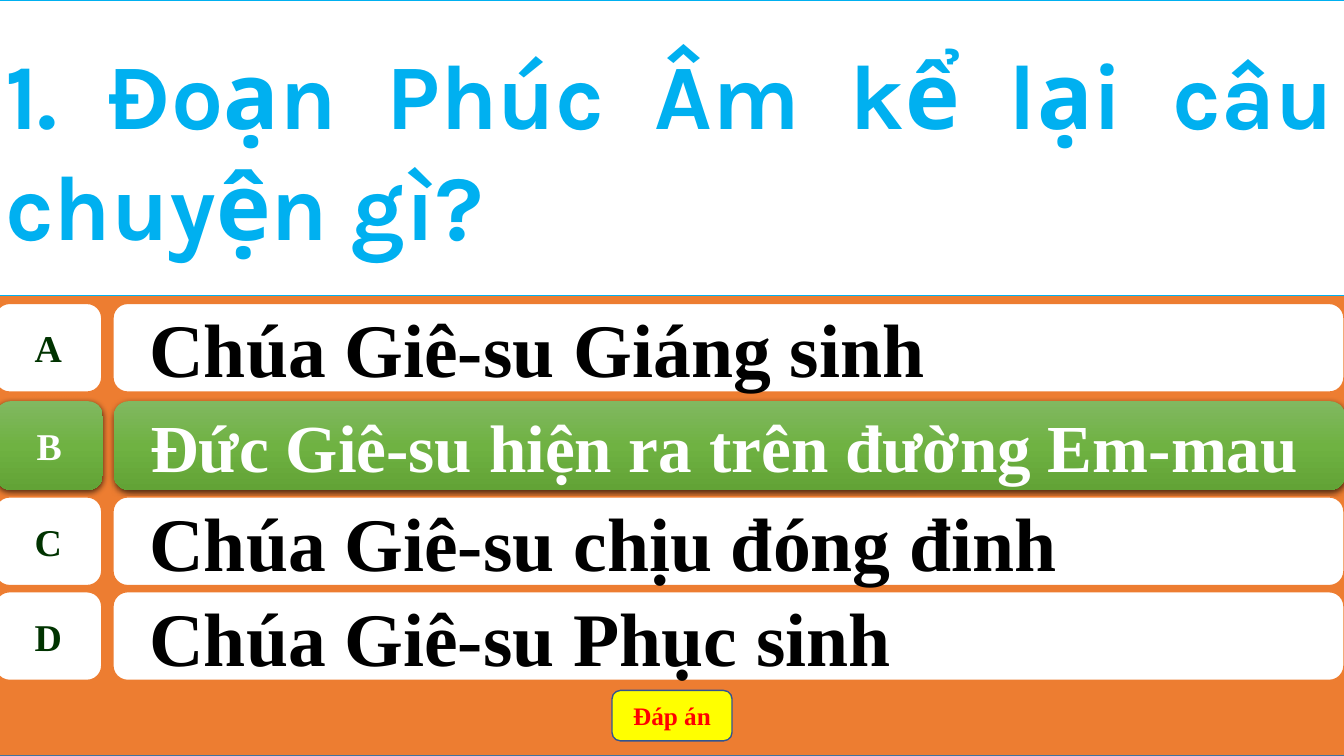
import pptx
import pptx.dml.color
import pptx.enum.shapes
import pptx.enum.text
import pptx.oxml
import pptx.oxml.ns
import pptx.util

Inches = pptx.util.Inches
Pt = pptx.util.Pt
RGB = pptx.dml.color.RGBColor
SHAPE = pptx.enum.shapes.MSO_SHAPE
ALIGN = pptx.enum.text.PP_ALIGN
ANCHOR = pptx.enum.text.MSO_ANCHOR

WHITE = RGB(0xFF, 0xFF, 0xFF)
BLACK = RGB(0x00, 0x00, 0x00)
ORANGE = RGB(0xED, 0x7D, 0x31)
STEEL = RGB(0x43, 0x73, 0x9E)
SKY = RGB(0x00, 0xB0, 0xF0)
FOREST = RGB(0x00, 0x33, 0x00)
YELLOW = RGB(0xFF, 0xFF, 0x00)
RED = RGB(0xFF, 0x00, 0x00)
NAVY = RGB(0x32, 0x54, 0x91)
GREENS = [(0, RGB(0x81, 0xB8, 0x61)), (50, RGB(0x6F, 0xB2, 0x42)), (100, RGB(0x62, 0xA3, 0x36))]

SERIF = "Times New Roman"
ROWS = [
    ("A", "Chúa Giê-su Giáng sinh", 54, 3.01, False),
    ("B", "Đức Giê-su hiện ra trên đường Em-mau", 48, 3.98, True),
    ("C", "Chúa Giê-su chịu đóng đinh", 54, 4.93, False),
    ("D", "Chúa Giê-su Phục sinh", 54, 5.87, False),
]


def paint(shape, fill, line):
    """Give a shape a plain fill and a thin outline."""
    shape.fill.solid()
    shape.fill.fore_color.rgb = fill
    shape.line.color.rgb = line
    shape.line.width = Pt(1)


def glow(shape):
    """Give a shape the green gradient and soft shadow of the right answer."""
    space = pptx.oxml.ns.nsdecls("a")
    stops = "".join(
        f'<a:gs pos="{pos * 1000}"><a:srgbClr val="{tone}"/></a:gs>' for pos, tone in GREENS
    )
    shape.line.fill.background()
    props = shape.element.spPr
    props.find(pptx.oxml.ns.qn("a:ln")).addprevious(pptx.oxml.parse_xml(
        f'<a:gradFill {space} rotWithShape="1"><a:gsLst>{stops}</a:gsLst>'
        '<a:lin ang="5400000" scaled="0"/></a:gradFill>'
    ))
    props.find(pptx.oxml.ns.qn("a:effectLst")).append(pptx.oxml.parse_xml(
        f'<a:outerShdw {space} blurRad="57150" dist="19050" dir="5400000" algn="ctr" '
        'rotWithShape="0"><a:srgbClr val="000000"><a:alpha val="63000"/></a:srgbClr></a:outerShdw>'
    ))


def block(shapes, kind, box):
    """Add a shape without shadow in a box given in inches."""
    shape = shapes.add_shape(kind, *map(Inches, box))
    shape.shadow.inherit = False
    return shape


def write(shape, text, size, color, align, font=SERIF, wrap=True):
    """Set one bold paragraph in the middle of a shape and return it."""
    frame = shape.text_frame
    frame.text = text
    frame.word_wrap = wrap
    frame.auto_size = pptx.enum.text.MSO_AUTO_SIZE.NONE
    frame.vertical_anchor = ANCHOR.MIDDLE
    para = frame.paragraphs[0]
    para.alignment = align
    face = para.runs[0].font
    face.name, face.size, face.bold = font, Pt(size), True
    face.color.rgb = color
    return para


def answer(slide, box, mark, text, size, right):
    """Place a letter tile and its answer bar as one group."""
    left, top, width, height = box
    shapes = slide.shapes.add_group_shape().shapes
    tile = block(shapes, SHAPE.FLOWCHART_ALTERNATE_PROCESS, (left, top, 1.06, height))
    bar = block(shapes, SHAPE.ROUNDED_RECTANGLE, (left + 1.17, top, width - 1.17, height))
    for shape in (tile, bar):
        if right:
            glow(shape)
        else:
            paint(shape, WHITE, ORANGE)
    write(tile, mark, 27, WHITE if right else FOREST, ALIGN.CENTER, wrap=False)
    para = write(bar, text, size, WHITE if right else BLACK, ALIGN.LEFT)
    para.level = 1
    props = para._p.get_or_add_pPr()
    props.set("marL", str(Inches(0.5)))
    props.set("indent", str(Inches(-0.28)))


def button(slide, box):
    """Place the yellow answer button."""
    shape = block(slide.shapes, SHAPE.ROUNDED_RECTANGLE, box)
    paint(shape, YELLOW, NAVY)
    write(shape, "Đáp án", 18, RED, ALIGN.CENTER)


def question(slide, box):
    """Place the question in the title, in front of the backdrop."""
    title = slide.shapes.title
    title.left, title.top, title.width, title.height = map(Inches, box)
    paint(title, WHITE, SKY)
    write(title, "1. Đoạn Phúc Âm kể lại câu chuyện gì?", 66, SKY, ALIGN.JUSTIFY, "Karla")
    title.element.getparent().append(title.element)


def main():
    """Build the quiz slide and save it."""
    deck = pptx.Presentation()
    deck.slide_width, deck.slide_height = Inches(13.33), Inches(7.5)
    slide = deck.slides.add_slide(deck.slide_layouts[5])
    back = block(slide.shapes, SHAPE.RECTANGLE, (-0.05, 0, 13.39, 7.5))
    paint(back, ORANGE, STEEL)
    for mark, text, size, top, right in ROWS:
        left = -0.04 if right else -0.05
        answer(slide, (left, top, 13.38, 0.88), mark, text, size, right)
    button(slide, (6.07, 6.85, 1.19, 0.5))
    question(slide, (-0.05, 0, 13.39, 2.93))
    deck.save("out.pptx")


if __name__ == "__main__":
    main()
